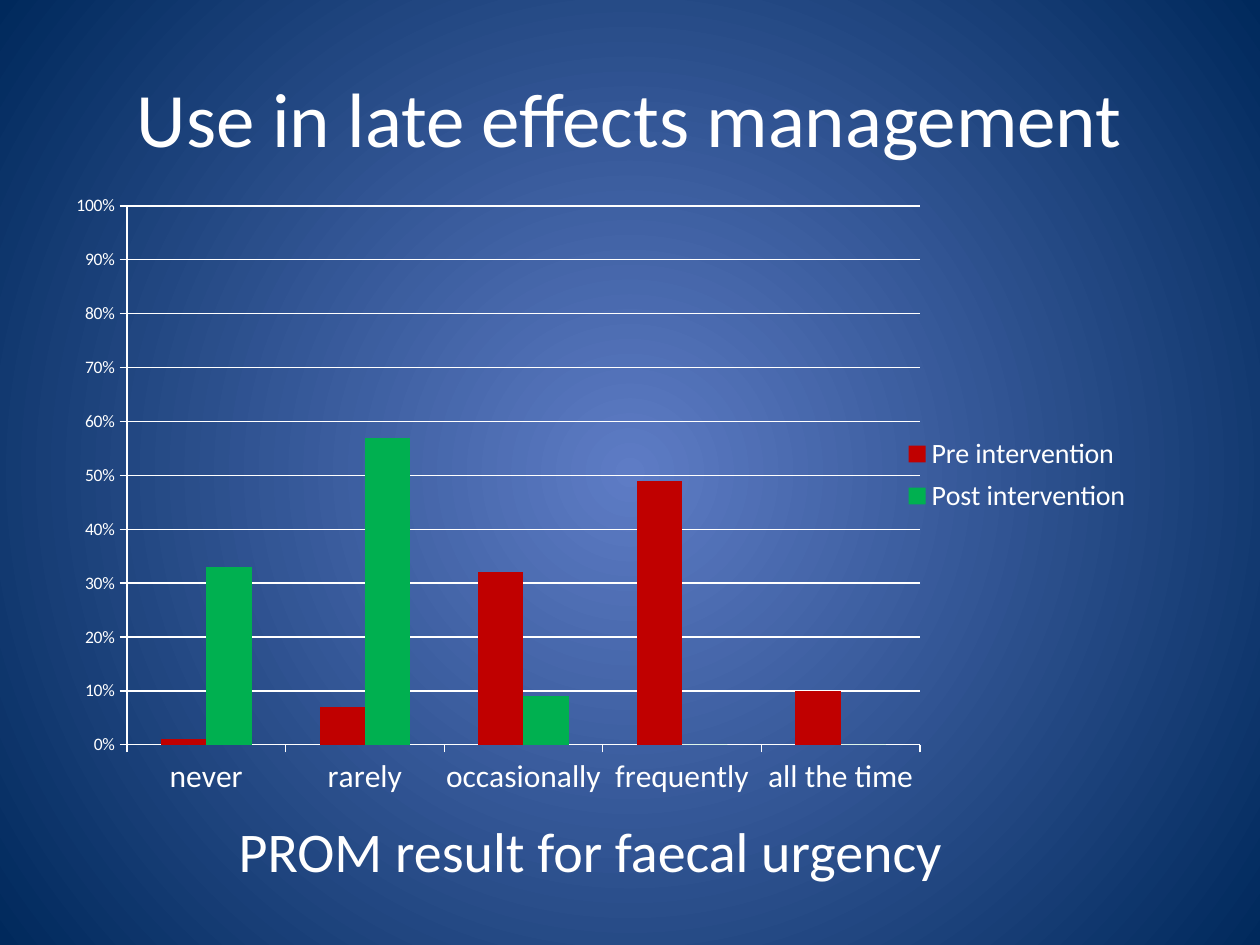
from lxml.etree import SubElement
from pptx import Presentation
from pptx.chart.data import CategoryChartData
from pptx.dml.color import RGBColor
from pptx.enum.chart import XL_CHART_TYPE, XL_LEGEND_POSITION, XL_TICK_MARK
from pptx.enum.text import MSO_ANCHOR, MSO_AUTO_SIZE, PP_ALIGN
from pptx.oxml.ns import qn
from pptx.util import Pt

PIXEL = 914400 / 126
WHITE = "FFFFFF"
CATEGORIES = ["never", "rarely", "occasionally", "frequently", "all the time"]
SERIES = [
    ("Pre intervention", "C00000", [0.01, 0.07, 0.32, 0.49, 0.1]),
    ("Post intervention", "00B050", [0.33, 0.57, 0.09, 0, 0]),
]


def px(value):
    return round(value * PIXEL)


def color(hex_text):
    return RGBColor.from_string(hex_text)


def apply(target, values):
    for name, value in values.items():
        setattr(target, name, value)


def format_font(font, size):
    apply(font, {"name": "Calibri", "size": Pt(size), "bold": False})
    font.color.rgb = color(WHITE)


def format_line(line):
    line.color.rgb = color(WHITE)
    line.width = Pt(0.75)


def write_text(shape, box, text, size, frame_format):
    apply(shape, dict(zip(("left", "top", "width", "height"), map(px, box))))
    apply(shape.text_frame, {"word_wrap": True, **frame_format})
    paragraph = shape.text_frame.paragraphs[0]
    paragraph.alignment = PP_ALIGN.CENTER
    run = paragraph.add_run()
    run.text = text
    format_font(run.font, size)


def paint_background(slide):
    fill = slide.background.fill
    fill.gradient()
    for stop, hex_text in zip(fill.gradient_stops, ("5E7CC5", "00295C")):
        stop.color.rgb = color(hex_text)
    gradient = next(slide.element.iter(qn("a:gradFill")))
    linear = gradient.find(qn("a:lin"))
    if linear is not None:
        gradient.remove(linear)
    circle = SubElement(gradient, qn("a:path"), {"path": "circle"})
    SubElement(circle, qn("a:fillToRect"), dict.fromkeys("ltrb", "50000"))


def set_layout(parent, index, box, chart_box, inner=False):
    old_layout = parent.find(qn("c:layout"))
    if old_layout is not None:
        parent.remove(old_layout)
    layout = SubElement(parent, qn("c:layout"))
    parent.insert(index, layout)
    manual = SubElement(layout, qn("c:manualLayout"))
    left, top, width, height = box
    chart_left, chart_top, chart_width, chart_height = chart_box
    values = {
        "xMode": "edge",
        "yMode": "edge",
        "x": (left - chart_left) / chart_width,
        "y": (top - chart_top) / chart_height,
        "w": width / chart_width,
        "h": height / chart_height,
    }
    if inner:
        values = {"layoutTarget": "inner", **values}
    for name, value in values.items():
        SubElement(manual, qn(f"c:{name}"), val=str(value))


def add_urgency_chart(slide, box):
    left, top, width, height = box
    data = CategoryChartData(number_format="0%")
    data.categories = CATEGORIES
    for name, _, values in SERIES:
        data.add_series(name, values)
    chart = slide.shapes.add_chart(
        XL_CHART_TYPE.COLUMN_CLUSTERED, *map(px, box), data
    ).chart
    apply(chart, {"has_title": False, "has_legend": True})
    format_font(chart.font, 10)

    plot = chart.plots[0]
    apply(plot, {"gap_width": 150, "overlap": 0, "vary_by_categories": False})
    for series, (_, hex_text, _) in zip(plot.series, SERIES):
        series.format.fill.solid()
        series.format.fill.fore_color.rgb = color(hex_text)

    apply(chart.value_axis, {
        "minimum_scale": 0, "maximum_scale": 1, "major_unit": 0.1,
        "has_major_gridlines": True,
    })
    apply(chart.value_axis.tick_labels,
          {"number_format": "0%", "number_format_is_linked": False})
    format_line(chart.value_axis.major_gridlines.format.line)
    for axis, size in ((chart.category_axis, 18), (chart.value_axis, 10)):
        axis.major_tick_mark = XL_TICK_MARK.OUTSIDE
        format_font(axis.tick_labels.font, size)
        format_line(axis.format.line)

    apply(chart.legend, {"position": XL_LEGEND_POSITION.RIGHT,
                         "include_in_layout": False})
    format_font(chart.legend.font, 16)
    plot_area = next(chart.element.iter(qn("c:plotArea")))
    legend = next(chart.element.iter(qn("c:legend")))
    set_layout(plot_area, 0, (left + 73, top + 21, 793, 539), box, True)
    set_layout(legend, 1, (left + 848, top + 244, 230, 92), box)


def build_slide(presentation):
    slide = presentation.slides.add_slide(presentation.slide_layouts[5])
    paint_background(slide)
    write_text(slide.shapes.title, (63, 38, 1134, 158),
               "Use in late effects management", 44,
               {"vertical_anchor": MSO_ANCHOR.MIDDLE})
    add_urgency_chart(slide, (54, 185, 1134, 624))
    caption = slide.shapes.add_textbox(0, 0, 0, 0)
    write_text(caption, (144, 810, 893, 81),
               "PROM result for faecal urgency", 32,
               {"auto_size": MSO_AUTO_SIZE.SHAPE_TO_FIT_TEXT})


def main():
    presentation = Presentation()
    apply(presentation, {"slide_width": px(1260), "slide_height": px(945)})
    build_slide(presentation)
    presentation.save("out.pptx")


if __name__ == "__main__":
    main()
